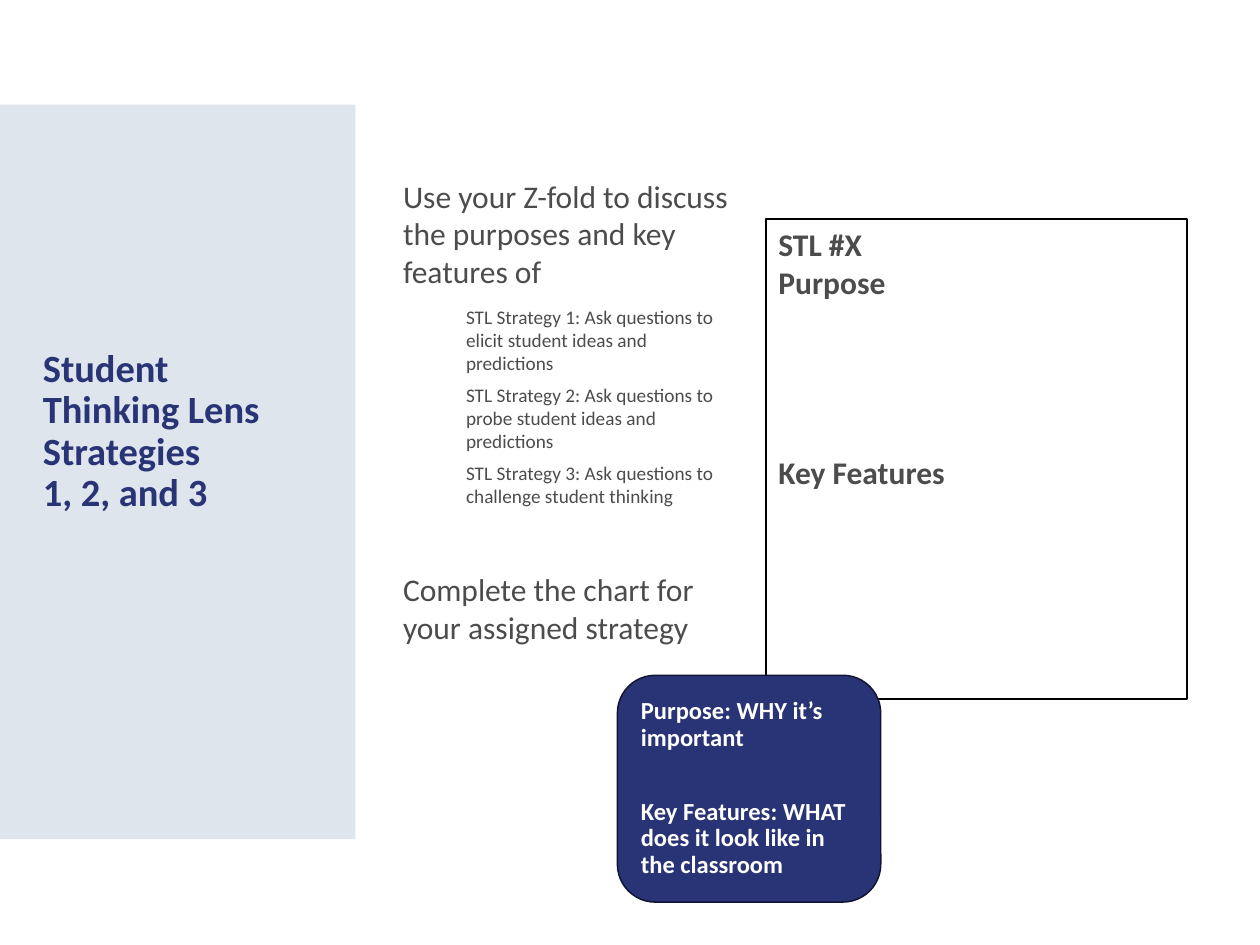
from pptx import Presentation
from pptx.dml.color import RGBColor
from pptx.enum.shapes import MSO_SHAPE
from pptx.enum.text import MSO_ANCHOR, MSO_AUTO_SIZE, PP_ALIGN
from pptx.util import Inches, Pt

WIDE, HIGH = Inches(10), Inches(7.5)
FONT = "Calibri"
NAVY = RGBColor(0x29, 0x34, 0x76)
EDGE = RGBColor(0x11, 0x15, 0x31)
PALE = RGBColor(0xDF, 0xE5, 0xED)
GREY = RGBColor(0x4C, 0x4C, 0x4C)
BLACK = RGBColor(0, 0, 0)
WHITE = RGBColor(0xFF, 0xFF, 0xFF)

STEPS = [
    "Ask questions to elicit student ideas and predictions",
    "Ask questions to probe student ideas and predictions",
    "Ask questions to challenge student thinking",
]


def area(left, top, width, height):
    """Turn inches into whole slide units."""
    return [Inches(n) for n in (left, top, width, height)]


def add_box(slide, kind, place, fill=None, line=None, weight=1):
    """Add a preset shape without a shadow."""
    box = slide.shapes.add_shape(kind, *place)
    box.shadow.inherit = False
    if fill is None:
        box.fill.background()
    else:
        box.fill.solid()
        box.fill.fore_color.rgb = fill
    if line is None:
        box.line.fill.background()
    else:
        box.line.color.rgb = line
        box.line.width = Pt(weight)
    return box


def set_frame(shape, anchor):
    """Prepare a text frame and return it."""
    frame = shape.text_frame
    frame.word_wrap = True
    frame.auto_size = MSO_AUTO_SIZE.NONE
    frame.vertical_anchor = anchor
    return frame


def add_text(frame, text, size, color, bold=False, gap=0, lead=1.0, level=0):
    """Fill the first paragraph if it is empty, otherwise add one."""
    para = frame.paragraphs[0]
    if para.runs:
        para = frame.add_paragraph()
    para.alignment = PP_ALIGN.LEFT
    para.line_spacing = lead
    para.space_before = Pt(gap)
    if level:
        para.level = level
        props = para._p.get_or_add_pPr()
        props.set("marL", str(Inches(0.5)))
        props.set("indent", "0")
    for part, line in enumerate(text.split("\n")):
        if part:
            para.add_line_break()
        run = para.add_run()
        run.text = line
        font = run.font
        font.name, font.size, font.bold = FONT, Pt(size), bold
        font.color.rgb = color


def add_title(slide):
    """Place the title on its pale side panel."""
    title = slide.shapes.title
    title.left, title.top, title.width, title.height = area(0.24, 1.74, 2.33, 2.4)
    frame = set_frame(title, MSO_ANCHOR.BOTTOM)
    add_text(frame, "Student Thinking Lens Strategies \n1, 2, and 3", 22, NAVY,
             bold=True, lead=0.9)
    panel = add_box(slide, MSO_SHAPE.RECTANGLE, area(0, 0.83, 2.82, 5.83), PALE)
    title.element.addprevious(panel.element)


def add_chart_card(slide):
    """Outline of the chart to complete."""
    card = add_box(slide, MSO_SHAPE.RECTANGLE, area(6.08, 1.74, 3.34, 3.81),
                   line=BLACK, weight=1.25)
    frame = set_frame(card, MSO_ANCHOR.TOP)
    for text, gap in (("STL #X", 0), ("Purpose", 0), ("Key Features", 87)):
        add_text(frame, text, 18, GREY, bold=True, gap=gap)


def add_hint(slide):
    """Rounded note that explains the two headings."""
    note = add_box(slide, MSO_SHAPE.ROUNDED_RECTANGLE, area(4.9, 5.36, 2.09, 1.8),
                   NAVY, EDGE, 0.85)
    frame = set_frame(note, MSO_ANCHOR.MIDDLE)
    add_text(frame, "Purpose: WHY it’s important", 14, WHITE, bold=True, lead=0.9)
    add_text(frame, "Key Features: WHAT does it look like in the classroom", 14, WHITE,
             bold=True, gap=27, lead=0.9)


def add_task(slide):
    """Instructions with the three strategies."""
    box = slide.shapes.add_textbox(*area(3.1, 0.88, 2.85, 4.77))
    frame = set_frame(box, MSO_ANCHOR.MIDDLE)
    add_text(frame, "Use your Z-fold to discuss the purposes and key features of",
             18, GREY)
    for count, step in enumerate(STEPS, 1):
        add_text(frame, f"STL Strategy {count}: {step}", 11, GREY,
                 gap=8.5 if count == 1 else 5, level=1)
    add_text(frame, "Complete the chart for your assigned strategy", 18, GREY, gap=36)


def main():
    deck = Presentation()
    deck.slide_width, deck.slide_height = WIDE, HIGH
    slide = deck.slides.add_slide(deck.slide_layouts[5])
    add_title(slide)
    add_chart_card(slide)
    add_hint(slide)
    add_task(slide)
    deck.save("out.pptx")


if __name__ == "__main__":
    main()
